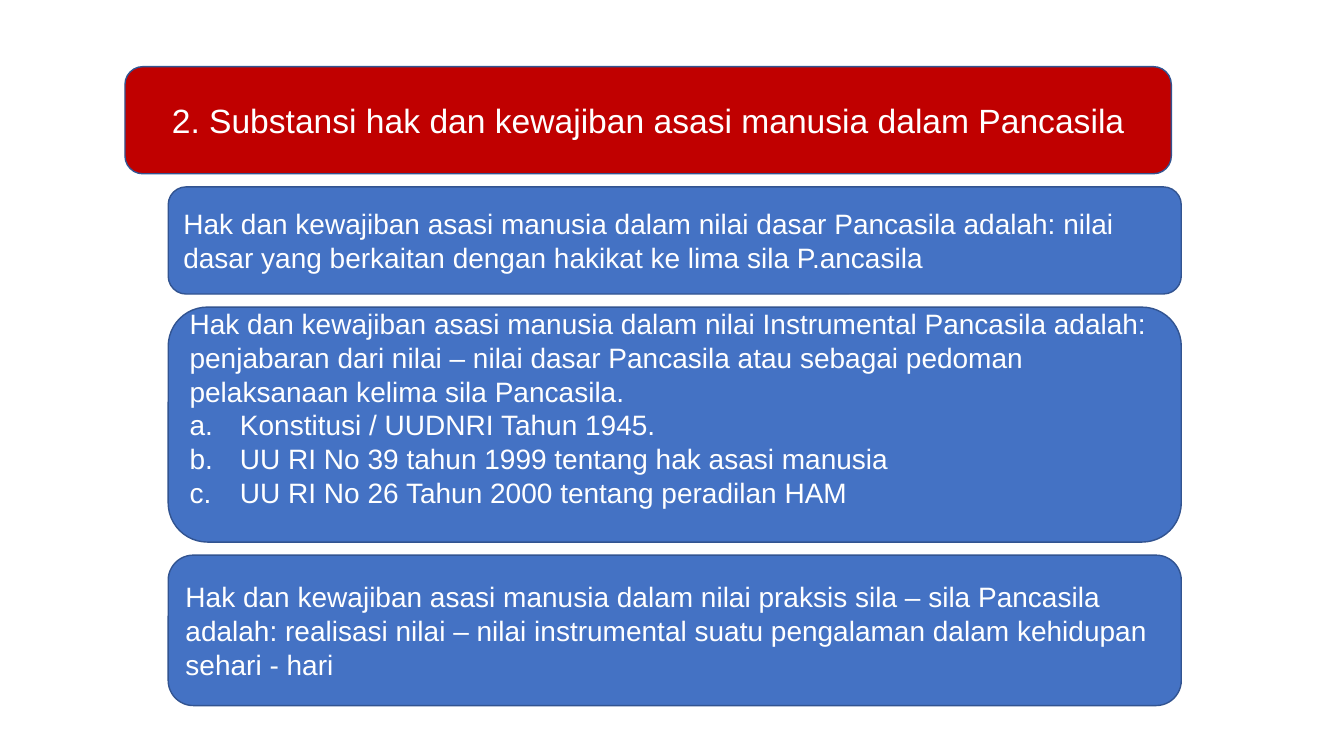
from lxml import etree
from pptx import Presentation
from pptx.dml.color import RGBColor
from pptx.enum.shapes import MSO_SHAPE
from pptx.enum.text import MSO_ANCHOR, PP_ALIGN
from pptx.oxml.ns import qn
from pptx.util import Cm, Pt

ROUNDED = MSO_SHAPE.ROUNDED_RECTANGLE
MIDDLE = MSO_ANCHOR.MIDDLE
LEFT, CENTER = PP_ALIGN.LEFT, PP_ALIGN.CENTER
COLORS = {"title": "C00000", "panel": "4472C4", "line": "325491", "text": "FFFFFF"}
FONT = "Arial"
GAP = 0.33


def color(name):
    """Return the named palette colour."""
    return RGBColor.from_string(COLORS[name])


def write(para, text, size=20, align=LEFT, lettered=False):
    """Write one formatted paragraph, optionally as a lettered list item."""
    para.alignment = align
    span = para.add_run()
    span.text = text
    span.font.name = FONT
    span.font.size = Pt(size)
    span.font.color.rgb = color("text")
    if lettered:
        properties = para._p.get_or_add_pPr()
        properties.set("marL", str(Cm(1.27)))
        properties.set("indent", str(-Cm(1.27)))
        numbering = etree.SubElement(properties, qn("a:buAutoNum"))
        numbering.set("type", "alphaLcPeriod")


class Page:
    """Hold the slide style and add elements to the current slide."""

    def __init__(self, deck):
        """Add a blank slide to the deck."""
        self.slide = deck.slides.add_slide(deck.slide_layouts[6])

    def panel(self, left, top, width, height, text, items=(), fill="panel", bottom=0.13, **style):
        """Add a rounded panel with a text and an optional lettered list."""
        box = self.slide.shapes.add_shape(ROUNDED, Cm(left), Cm(top), Cm(width), Cm(height))
        box.shadow.inherit = False
        box.fill.solid()
        box.fill.fore_color.rgb = color(fill)
        box.line.color.rgb = color("line")
        box.line.width = Pt(1)
        frame = box.text_frame
        frame.word_wrap = True
        frame.vertical_anchor = MIDDLE
        frame.margin_bottom = Cm(bottom)
        write(frame.paragraphs[0], text, **style)
        for item in items:
            write(frame.add_paragraph(), item, lettered=True)


deck = Presentation()
deck.slide_width, deck.slide_height = Cm(33.87), Cm(19.05)
page = Page(deck)

title = {"left": 3.15, "width": 26.37, "fill": "title", "size": 24, "align": CENTER}
value = {"left": 4.24, "width": 25.53}
laws = (
    "Konstitusi / UUDNRI Tahun 1945.",
    "UU RI No 39 tahun 1999 tentang hak asasi manusia",
    "UU RI No 26 Tahun 2000 tentang peradilan HAM",
)
panels = [
    (2.7, "2. Substansi hak dan kewajiban asasi manusia dalam Pancasila", title),
    (2.7, "Hak dan kewajiban asasi manusia dalam nilai dasar Pancasila adalah: "
          "nilai dasar yang berkaitan dengan hakikat ke lima sila P.ancasila", value),
    (5.92, "Hak dan kewajiban asasi manusia dalam nilai Instrumental Pancasila adalah: "
           "penjabaran dari nilai – nilai dasar Pancasila atau sebagai pedoman "
           "pelaksanaan kelima sila Pancasila.", {**value, "items": laws, "bottom": 0.97}),
    (3.79, "Hak dan kewajiban asasi manusia dalam nilai praksis sila – sila Pancasila "
           "adalah: realisasi nilai – nilai instrumental suatu pengalaman dalam "
           "kehidupan sehari - hari", value),
]

top = 1.68
for height, text, style in panels:
    page.panel(top=top, height=height, text=text, **style)
    top += height + GAP

deck.save("out.pptx")
